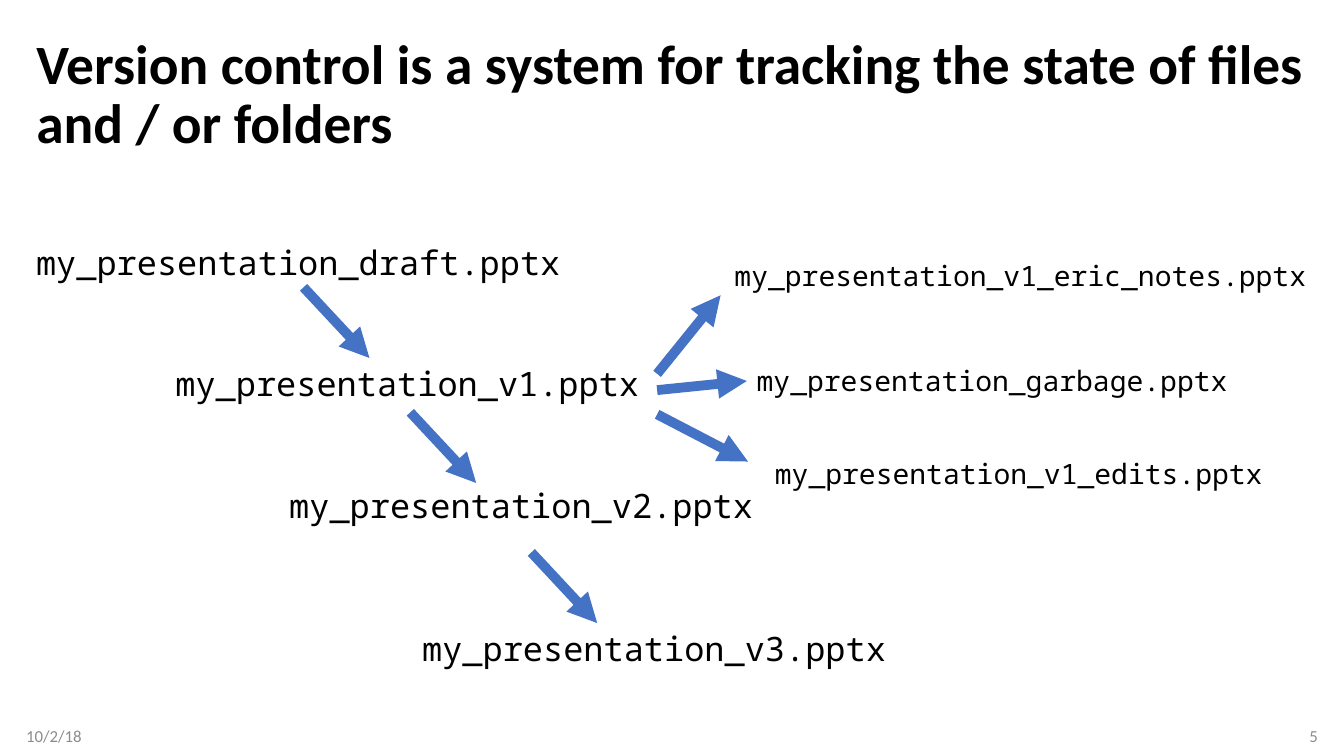
from dataclasses import dataclass

from lxml.etree import SubElement
from pptx import Presentation
from pptx.dml.color import RGBColor
from pptx.enum.shapes import MSO_CONNECTOR
from pptx.enum.text import MSO_ANCHOR, MSO_AUTO_SIZE, PP_ALIGN
from pptx.oxml.ns import qn
from pptx.util import Cm, Pt

# Lengths in cm
TITLE = "Version control is a system for tracking the state of files and / or folders"
DATE, NUMBER = "10/2/18", "5"
MAIN = [  # name, left, top
    ("my_presentation_draft.pptx", 0.66, 5.97),
    ("my_presentation_v1.pptx", 4.17, 9.02),
    ("my_presentation_v2.pptx", 7.04, 12.09),
    ("my_presentation_v3.pptx", 10.39, 15.7),
]
SIDE = [
    ("my_presentation_v1_eric_notes.pptx", 18.26, 6.4),
    ("my_presentation_garbage.pptx", 18.82, 9.04),
    ("my_presentation_v1_edits.pptx", 19.28, 11.38),
]
STEPS = [(7.65, 7.24), (10.34, 10.39), (13.39, 13.92)]  # arrow starts
RUN, DROP = 1.66, 1.78  # reach of each step arrow
FORK = 16.56  # left end of the branch arrows
FORKS = [  # start y, end x, end y
    (9.42, 18.16, 7.44),
    (9.83, 18.82, 9.6),
    (10.44, 18.85, 11.63),
]
WIDE, HIGH, EDGE = 33.87, 19.05, 0.66


@dataclass(frozen=True)
class Theme:
    sans: str = "Calibri"
    mono: str = "Noto Sans Mono"
    ink: RGBColor = RGBColor(0x00, 0x00, 0x00)
    grey: RGBColor = RGBColor(0x8C, 0x8C, 0x8C)
    blue: RGBColor = RGBColor(0x44, 0x72, 0xC4)
    head: float = 39.6
    main: float = 24
    side: float = 20
    foot: float = 12
    line: float = 7


theme = Theme()


def place(shape, left, top, width, height):
    shape.left, shape.top = Cm(left), Cm(top)
    shape.width, shape.height = Cm(width), Cm(height)


def write(shape, text, face, size, color, bold=False, align=PP_ALIGN.LEFT):
    para = shape.text_frame.paragraphs[0]
    para.text, para.alignment = text, align
    font = para.font
    font.name, font.size, font.bold = face, Pt(size), bold
    font.color.rgb = color
    return para


def add_title(slide):
    title = slide.shapes.title
    place(title, EDGE, 0.64, WIDE - 2 * EDGE, 3.56)
    frame = title.text_frame
    frame.word_wrap, frame.auto_size = True, MSO_AUTO_SIZE.NONE
    frame.vertical_anchor = MSO_ANCHOR.MIDDLE
    para = write(title, TITLE, theme.sans, theme.head, theme.ink, bold=True)
    para.line_spacing = 0.9


def add_file(slide, name, left, top, width, height, size):
    width = min(width, WIDE - left)
    box = slide.shapes.add_textbox(Cm(left), Cm(top), Cm(width), Cm(height))
    box.text_frame.word_wrap = True
    box.text_frame.auto_size = MSO_AUTO_SIZE.SHAPE_TO_FIT_TEXT
    write(box, name, theme.mono, size, theme.ink)


def add_foot(slide, text, left, align):
    box = slide.shapes.add_textbox(Cm(left), Cm(18.03), Cm(7.62), Cm(1.02))
    frame = box.text_frame
    frame.word_wrap, frame.vertical_anchor = True, MSO_ANCHOR.MIDDLE
    if align == PP_ALIGN.LEFT:
        frame.margin_left = 0
    else:
        frame.margin_right = 0
    write(box, text, theme.sans, theme.foot, theme.grey, align=align)


def add_arrow(slide, *ends):
    arrow = slide.shapes.add_connector(MSO_CONNECTOR.STRAIGHT, *map(Cm, ends))
    arrow.line.color.rgb, arrow.line.width = theme.blue, Pt(theme.line)
    props = arrow.line._get_or_add_ln()
    SubElement(props, qn("a:tailEnd"), type="triangle")
    SubElement(props.getparent(), qn("a:effectLst"))


def main():
    deck = Presentation()
    deck.slide_width, deck.slide_height = Cm(WIDE), Cm(HIGH)
    slide = deck.slides.add_slide(deck.slide_layouts[5])
    add_title(slide)
    for name, left, top in MAIN:
        add_file(slide, name, left, top, 14, 1.27, theme.main)
    for name, left, top in SIDE:
        add_file(slide, name, left, top, 14.96, 1.12, theme.side)
    for x, y in STEPS:
        add_arrow(slide, x, y, x + RUN, y + DROP)
    for start, x, y in FORKS:
        add_arrow(slide, FORK, start, x, y)
    add_foot(slide, DATE, EDGE, PP_ALIGN.LEFT)
    add_foot(slide, NUMBER, WIDE - EDGE - 7.62, PP_ALIGN.RIGHT)
    deck.save("out.pptx")


if __name__ == "__main__":
    main()
